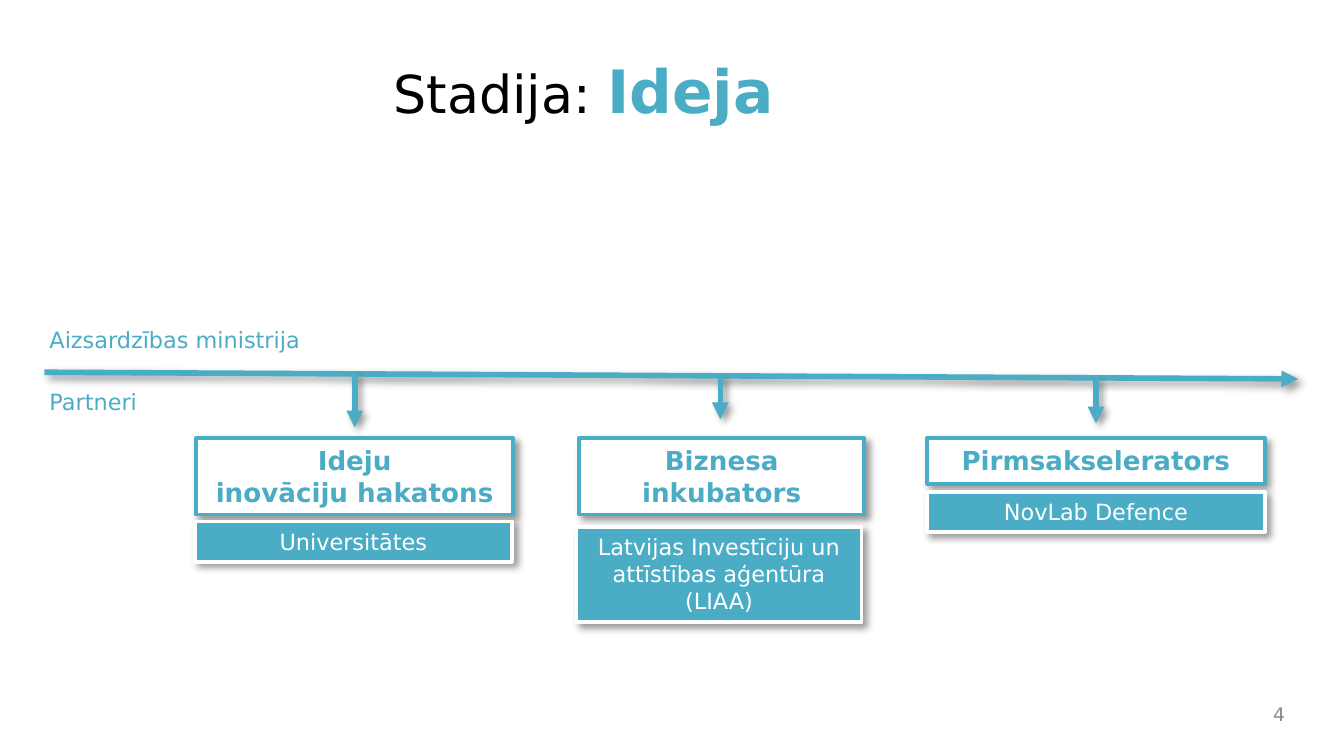
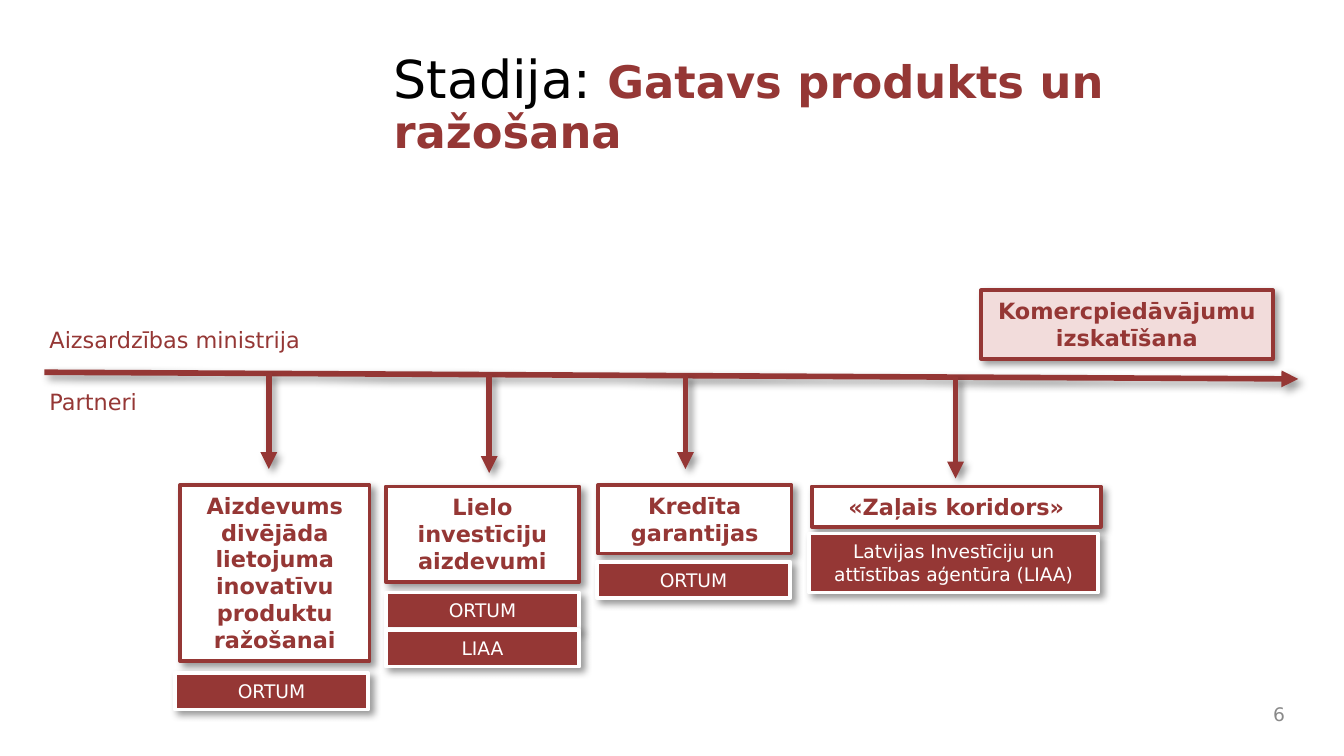
from dataclasses import dataclass

from lxml.etree import SubElement as Sub
from pptx import Presentation
from pptx.dml.color import RGBColor as Rgb
from pptx.enum.shapes import MSO_CONNECTOR as Conn, MSO_SHAPE as Kind
from pptx.enum.text import MSO_ANCHOR as Anchor, PP_ALIGN as Align
from pptx.oxml.ns import qn
from pptx.util import Inches, Pt


@dataclass(frozen=True)
class Theme:
    """Colours, font and type sizes that both slides share."""

    font: str = "DejaVu Sans"
    ink: str = "000000"
    paper: str = "FFFFFF"
    grey: str = "898989"
    teal: str = "4BACC6"
    red: str = "953735"
    blush: str = "F2DCDB"
    title: int = 28
    large: int = 14
    body: int = 12
    small: int = 10
    edge: int = 2
    stem: int = 3


THEME = Theme()
COLS, ROWS = 100, 56.25
CELL = Inches(0.1)
AXIS = (3.3, 27.7, 96.6, 28.2)
AGENCY = "Latvijas Investīciju un attīstības aģentūra (LIAA)"
FUND = "ORTUM"

IDEA = [
    (26.4, 31.8, (14.6, 32.6, 23.6, 5.7), ["Ideju", "inovāciju hakatons"],
     [((14.5, 38.8, 23.6, 3), "Universitātes")]),
    (53.6, 31.2, (43.1, 32.6, 21.2, 5.7), ["Biznesa inkubators"],
     [((42.9, 39.2, 21.2, 7.1), AGENCY)]),
    (81.55, 31.5, (69, 32.6, 25.1, 3.4), ["Pirmsakselerators"],
     [((69, 36.6, 25.1, 3), "NovLab Defence")]),
]
PRODUCT = [
    (20, 34.9, (13.4, 36.1, 14.1, 13.1),
     ["Aizdevums divējāda lietojuma inovatīvu produktu ražošanai"],
     [((13, 50.1, 14.4, 2.7), FUND)]),
    (36.4, 35.2, (28.7, 36.2, 14.4, 7.1), ["Lielo investīciju aizdevumi"],
     [((28.7, 44.1, 14.4, 2.7), FUND), ((28.7, 46.9, 14.4, 2.7), "LIAA")]),
    (51, 34.9, (44.5, 36.1, 14.4, 5.1), ["Kredīta garantijas"],
     [((44.4, 41.8, 14.4, 2.7), FUND)]),
    (71.1, 35.6, (60.4, 36.2, 21.5, 3), ["«Zaļais koridors»"],
     [((60.2, 39.7, 21.5, 4.4), AGENCY)]),
]


def grid(*cells):
    """Turn grid cells into slide lengths."""
    return [round(n * CELL) for n in cells]


def style(font, size, tint, bold=False):
    """Set the shared font with a size, colour and weight."""
    font.name, font.size, font.bold = THEME.font, Pt(size), bold
    font.color.rgb = Rgb.from_string(tint)


def shade(item):
    """Give a shape or connector the soft shadow."""
    props = item._element.spPr
    for old in props.findall(qn("a:effectLst")):
        props.remove(old)
    glow = Sub(Sub(props, qn("a:effectLst")), qn("a:outerShdw"),
               blurRad=str(Pt(4)), dist=str(Pt(3)), dir="2700000",
               algn="tl", rotWithShape="0")
    ink = Sub(glow, qn("a:srgbClr"), val=THEME.ink)
    Sub(ink, qn("a:alpha"), val="40000")


def write(frame, lines, size, tint, bold=False, align=Align.LEFT):
    """Fill a text frame with one paragraph a line."""
    frame.word_wrap = True
    for i, line in enumerate(lines):
        para = frame.paragraphs[0] if i == 0 else frame.add_paragraph()
        para.text, para.alignment = line, align
        style(para.font, size, tint, bold)


def label(slide, place, text, size, tint, align=Align.LEFT):
    """Add a single line of free text."""
    frame = slide.shapes.add_textbox(*grid(*place)).text_frame
    write(frame, [text], size, tint, align=align)
    return frame


def box(slide, place, lines, size, fill, edge, tint, bold=False):
    """Add a shadowed box with centred text."""
    rect = slide.shapes.add_shape(Kind.RECTANGLE, *grid(*place))
    rect.fill.solid()
    rect.fill.fore_color.rgb = Rgb.from_string(fill)
    rect.line.color.rgb = Rgb.from_string(edge)
    rect.line.width = Pt(THEME.edge)
    shade(rect)
    rect.text_frame.vertical_anchor = Anchor.TOP
    write(rect.text_frame, lines, size, tint, bold, Align.CENTER)


def arrow(slide, ends, tint):
    """Add a shadowed arrow between two grid points."""
    link = slide.shapes.add_connector(Conn.STRAIGHT, *grid(*ends))
    link.line.color.rgb = Rgb.from_string(tint)
    link.line.width = Pt(THEME.stem)
    Sub(link.line._get_or_add_ln(), qn("a:tailEnd"), type="triangle")
    shade(link)


def title(slide, width, name, size, tint, pitch):
    """Add the stage title with its name in the accent colour."""
    frame = slide.shapes.add_textbox(*grid(28.3, 3.1, width, 10)).text_frame
    frame.word_wrap = True
    frame.margin_top = Inches(0.09)
    para = frame.paragraphs[0]
    para.line_spacing = pitch
    for text, *look in (("Stadija: ", THEME.title, THEME.ink),
                        (name, size, tint, True)):
        run = para.add_run()
        run.text = text
        style(run.font, *look)


def axis(slide, tint):
    """Add the time axis and the names of its two sides."""
    arrow(slide, AXIS, tint)
    label(slide, (2.7, 23.8, 27.4, 3), "Aizsardzības ministrija",
          THEME.body, tint)
    label(slide, (2.7, 28.4, 31, 3), "Partneri", THEME.body, tint)


def step(slide, data, tint, head, sub):
    """Add one step below the axis: arrow, heading and partners."""
    col, tip, place, lines, mates = data
    left, top, right, base = AXIS
    start = top + (base - top) * (col - left) / (right - left)
    arrow(slide, (col, start, col, tip), tint)
    box(slide, place, lines, head, THEME.paper, tint, tint, True)
    for spot, mate in mates:
        box(slide, spot, [mate], sub, tint, THEME.paper, THEME.paper)


def stage(deck, number, steps, tint, head, sub):
    """Add a slide with its axis, steps and page number."""
    slide = deck.slides.add_slide(deck.slide_layouts[6])
    axis(slide, tint)
    for data in steps:
        step(slide, data, tint, head, sub)
    frame = label(slide, (93.3, 51.9, 3.3, 2.5), number, THEME.small,
                  THEME.grey, Align.RIGHT)
    frame.vertical_anchor = Anchor.MIDDLE
    return slide


def main():
    """Build both stages and save the deck."""
    deck = Presentation()
    deck.slide_width, deck.slide_height = grid(COLS, ROWS)
    idea = stage(deck, "4", IDEA, THEME.teal, THEME.large, THEME.body)
    title(idea, 66.7, "Ideja", 32, THEME.teal, 1.0)
    ready = stage(deck, "6", PRODUCT, THEME.red, THEME.body, THEME.small)
    title(ready, 71.7, "Gatavs produkts un ražošana", 24, THEME.red, 0.9)
    box(ready, (73, 21.6, 21.7, 5.1), ["Komercpiedāvājumu izskatīšana"],
        THEME.body, THEME.blush, THEME.red, THEME.red, True)
    deck.save("out.pptx")


if __name__ == "__main__":
    main()
